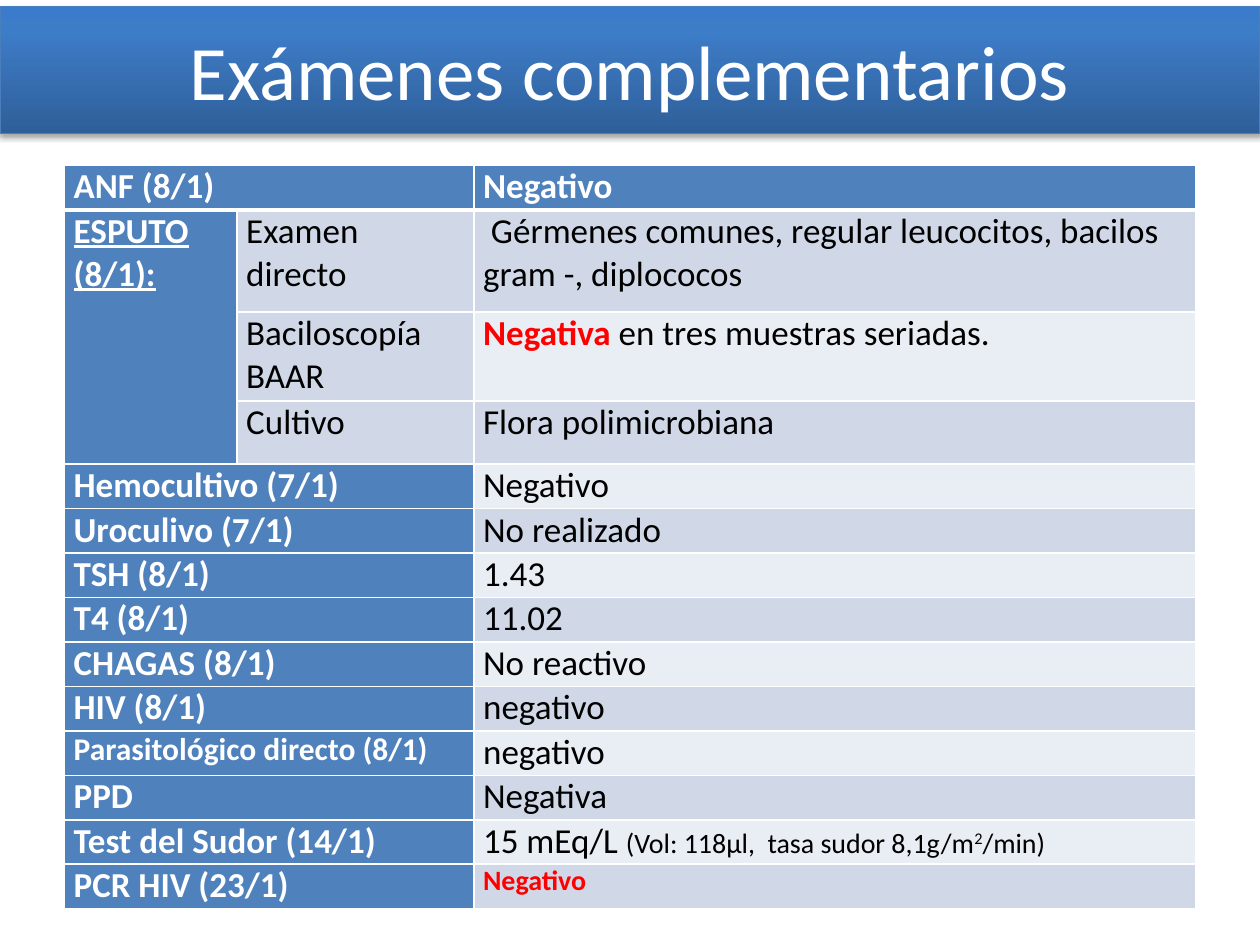
import pptx
import pptx.dml.color
import pptx.enum.shapes
import pptx.enum.text
import pptx.oxml
import pptx.oxml.ns
import pptx.util
from pptx.util import Pt

RGBColor = pptx.dml.color.RGBColor
WHITE = RGBColor(0xFF, 0xFF, 0xFF)
BLACK = RGBColor(0, 0, 0)
RED = RGBColor(0xFF, 0, 0)
HEADER_BLUE = RGBColor(0x4F, 0x81, 0xBD)
BAND_DARK = RGBColor(0xD0, 0xD8, 0xE8)
BAND_LIGHT = RGBColor(0xE9, 0xED, 0xF4)
TITLE_LINE = RGBColor(0x4B, 0x7E, 0xBC)
TITLE_BOTTOM = RGBColor(0x2F, 0x5F, 0x99)
TITLE_MIDDLE = RGBColor(0x3D, 0x7C, 0xC7)
TITLE_TOP = RGBColor(0x3A, 0x7C, 0xCB)

FONT = "Calibri"
NS = pptx.oxml.ns.nsdecls("a")
COLUMN_WIDTHS = (98.6, 135.4, 412.6)
ROW_HEIGHT = 25.4
SPUTUM_HEIGHTS = {1: 58.3, 2: 51.1, 3: 36}

# Each result is a list of runs: text and what differs from the default
SPUTUM_TESTS = [
    ("Examen directo",
     [("\u00a0Gérmenes comunes, regular leucocitos, bacilos gram -, diplococos", {})]),
    ("Baciloscopía BAAR",
     [("Negativa ", {"color": RED, "bold": True}), ("en tres muestras seriadas.", {})]),
    ("Cultivo", [("Flora polimicrobiana", {})]),
]
OTHER_TESTS = [
    ("Hemocultivo (7/1)", [("Negativo", {})]),
    ("Uroculivo (7/1)", [("No realizado", {})]),
    ("TSH (8/1)", [("1.43", {})]),
    ("T4 (8/1)", [("11.02", {})]),
    ("CHAGAS (8/1)", [("No reactivo", {})]),
    ("HIV (8/1)", [("negativo", {})]),
    ("Parasitológico directo (8/1)", [("negativo", {})]),
    ("PPD", [("Negativa", {})]),
    ("Test del Sudor (14/1)",
     [("15 mEq/L ", {}), ("(Vol: 118µl,  tasa sudor 8,1g/m", {"size": 16}),
      ("2", {"size": 16, "superscript": True}), ("/min)", {"size": 16})]),
    ("PCR HIV (23/1)", [("Negativo", {"size": 16, "color": RED, "bold": True})]),
]
LABEL_SIZES = {"Parasitológico directo (8/1)": 18}


def add_run(paragraph, text, size=20, color=BLACK, bold=False,
            underline=False, superscript=False):
    run = paragraph.add_run()
    run.text = text
    font = run.font
    font.name, font.size, font.bold = FONT, Pt(size), bold
    font.underline = underline
    font.color.rgb = color
    if superscript:
        font._element.set("baseline", "30000")


def add_title_band(slide, left, top, width, height):
    band = slide.shapes.add_shape(
        pptx.enum.shapes.MSO_SHAPE.RECTANGLE, Pt(left), Pt(top), Pt(width), Pt(height))
    band.line.color.rgb = TITLE_LINE
    band.line.width = Pt(0.75)

    # Gradient running from the bottom edge to the top
    band.fill.gradient()
    band.fill.gradient_angle = 90
    stops = band._element.spPr.find(".//" + pptx.oxml.ns.qn("a:gsLst"))
    for stop in list(stops):
        stops.remove(stop)
    for percent, color in ((0, TITLE_BOTTOM), (80, TITLE_MIDDLE), (100, TITLE_TOP)):
        stops.append(pptx.oxml.parse_xml(
            f'<a:gs {NS} pos="{percent * 1000}"><a:srgbClr val="{color}"/></a:gs>'))

    # Soft shadow below
    band.shadow.inherit = False
    effects = band._element.spPr.find(pptx.oxml.ns.qn("a:effectLst"))
    effects.append(pptx.oxml.parse_xml(
        f'<a:outerShdw {NS} blurRad="{Pt(3.1)}" dist="{Pt(1.8)}" dir="5400000" '
        'rotWithShape="0"><a:srgbClr val="000000"><a:alpha val="35000"/>'
        '</a:srgbClr></a:outerShdw>'))

    frame = band.text_frame
    frame.word_wrap = True
    frame.vertical_anchor = pptx.enum.text.MSO_ANCHOR.MIDDLE
    heading = frame.paragraphs[0]
    heading.alignment = pptx.enum.text.PP_ALIGN.CENTER
    add_run(heading, "Exámenes complementarios", size=44, color=WHITE)


def style_cell(cell, fill, top=1, bottom=1):
    cell.margin_left = cell.margin_right = Pt(5.2)
    cell.margin_top = cell.margin_bottom = 0
    properties = cell._tc.get_or_add_tcPr()
    for side, width in (("L", 1), ("R", 1), ("T", top), ("B", bottom)):
        properties.append(pptx.oxml.parse_xml(
            f'<a:ln{side} {NS} w="{Pt(width)}"><a:solidFill>'
            f'<a:srgbClr val="{WHITE}"/></a:solidFill></a:ln{side}>'))
    cell.fill.solid()
    cell.fill.fore_color.rgb = fill


def write_cell(cell, runs):
    for text, style in runs:
        add_run(cell.text_frame.paragraphs[0], text, **style)


def add_results_table(slide, left, top):
    row_count = 1 + len(SPUTUM_TESTS) + len(OTHER_TESTS)
    heights = [SPUTUM_HEIGHTS.get(row, ROW_HEIGHT) for row in range(row_count)]
    table = slide.shapes.add_table(
        row_count, len(COLUMN_WIDTHS), Pt(left), Pt(top),
        Pt(sum(COLUMN_WIDTHS)), Pt(sum(heights))).table
    for column, width in zip(table.columns, COLUMN_WIDTHS):
        column.width = Pt(width)
    for row, height in zip(table.rows, heights):
        row.height = Pt(height)

    # Fills and borders: blue labels, banded results, thick rule under the header
    for row in range(row_count):
        band = BAND_DARK if row % 2 else BAND_LIGHT
        in_sputum = row in SPUTUM_HEIGHTS
        fills = (HEADER_BLUE, BAND_DARK if in_sputum else HEADER_BLUE,
                 band if row else HEADER_BLUE)
        for column, fill in enumerate(fills):
            style_cell(table.cell(row, column), fill,
                       top=3 if row == 1 else 1, bottom=1 if row else 3)

    label_style = {"color": WHITE, "bold": True}

    # Header row
    table.cell(0, 0).merge(table.cell(0, 1))
    write_cell(table.cell(0, 0), [("ANF (8/1)", label_style)])
    write_cell(table.cell(0, 2), [("Negativo", label_style)])

    # Sputum group
    table.cell(1, 0).merge(table.cell(len(SPUTUM_TESTS), 0))
    write_cell(table.cell(1, 0), [("ESPUTO (8/1):", {**label_style, "underline": True})])
    for row, (test, result) in enumerate(SPUTUM_TESTS, start=1):
        write_cell(table.cell(row, 1), [(test, {})])
        write_cell(table.cell(row, 2), result)

    # Remaining tests
    for row, (test, result) in enumerate(OTHER_TESTS, start=1 + len(SPUTUM_TESTS)):
        table.cell(row, 0).merge(table.cell(row, 1))
        size = LABEL_SIZES.get(test, 20)
        write_cell(table.cell(row, 0), [(test, {**label_style, "size": size})])
        write_cell(table.cell(row, 2), result)


def main():
    presentation = pptx.Presentation()
    presentation.slide_width, presentation.slide_height = Pt(720), Pt(540)
    slide = presentation.slides.add_slide(presentation.slide_layouts[6])
    add_title_band(slide, 0, 3.6, 720, 72.7)
    add_results_table(slide, 36.9, 94.5)
    presentation.save("out.pptx")


if __name__ == "__main__":
    main()
